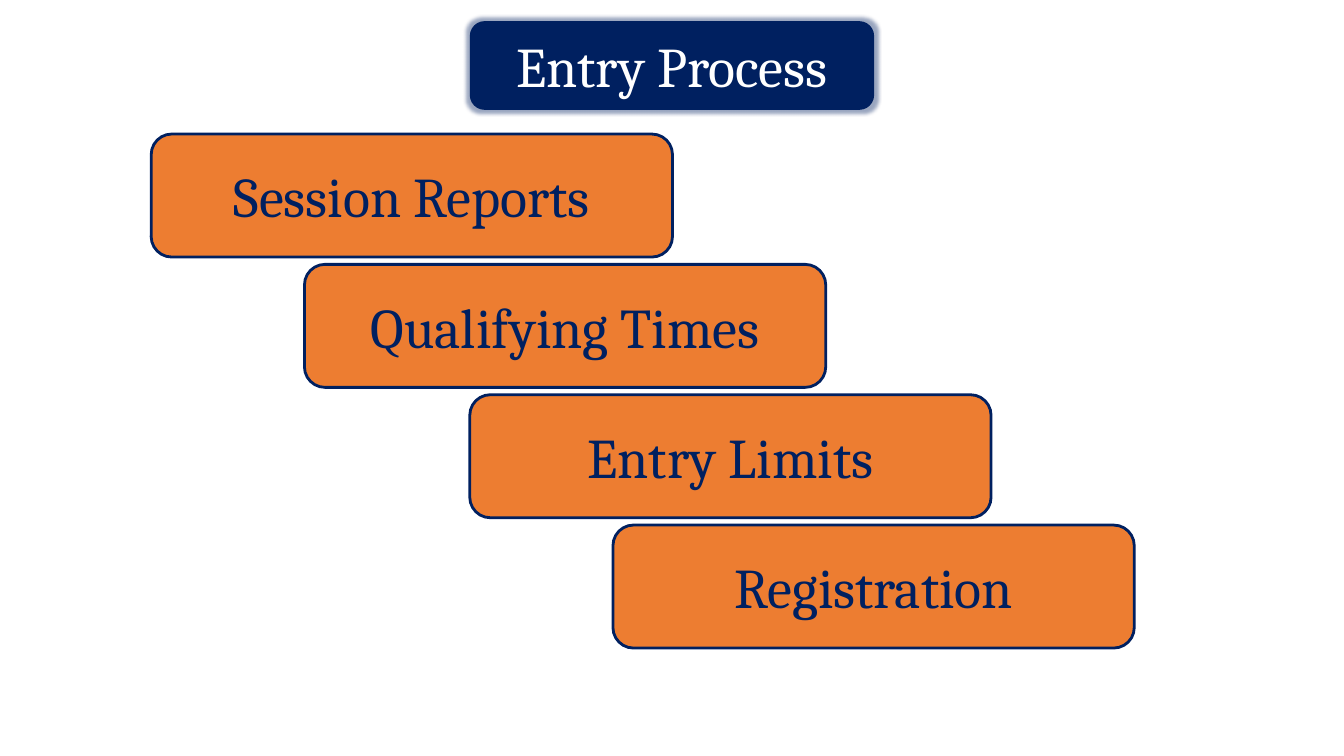
from lxml import etree
from pptx import Presentation
from pptx.dml.color import RGBColor
from pptx.enum import shapes, text
from pptx.oxml.ns import qn
from pptx.util import Inches, Pt

TITLE = "Entry Process"
TITLE_BOX = (4.66, 0.21, 4.01, 0.88)

# Each step with its left edge in inches
STEPS = [
    ("Session Reports", 1.5),
    ("Qualifying Times", 3.02),
    ("Entry Limits", 4.66),
    ("Registration", 6.08),
]
FIRST_TOP, PITCH = 1.33, 1.293
STEP_WIDTH, STEP_HEIGHT = 5.17, 1.22

THEME = {
    "navy": "002060",
    "orange": "ED7D31",
    "white": "FFFFFF",
    "font": "Cambria",
    "size": 40,
    "outline": 2,
    "glow_radius": 5,
    "glow_alpha": 40,
}


def color(name):
    return RGBColor.from_string(THEME[name])


def add_box(slide, label, box, fill, ink, outline=None):
    """Add a rounded rectangle with a centred label."""
    panel = slide.shapes.add_shape(
        shapes.MSO_SHAPE.ROUNDED_RECTANGLE, *map(Inches, box))
    panel.shadow.inherit = False
    panel.fill.solid()
    panel.fill.fore_color.rgb = color(fill)
    if outline:
        panel.line.color.rgb = color(outline)
        panel.line.width = Pt(THEME["outline"])
    else:
        panel.line.fill.background()

    frame = panel.text_frame
    frame.text = label
    frame.word_wrap = True
    frame.vertical_anchor = text.MSO_ANCHOR.MIDDLE
    paragraph = frame.paragraphs[0]
    paragraph.alignment = text.PP_ALIGN.CENTER
    font = paragraph.runs[0].font
    font.name = THEME["font"]
    font.size = Pt(THEME["size"])
    font.color.rgb = color(ink)
    return panel


def add_glow(panel, name):
    effects = panel._element.spPr.find(qn("a:effectLst"))
    glow = etree.SubElement(effects, qn("a:glow"),
                            rad=str(Pt(THEME["glow_radius"])))
    tint = etree.SubElement(glow, qn("a:srgbClr"), val=THEME[name])
    etree.SubElement(tint, qn("a:alpha"), val=str(THEME["glow_alpha"] * 1000))


def main():
    deck = Presentation()
    deck.slide_width, deck.slide_height = Inches(13.33), Inches(7.5)
    slide = deck.slides.add_slide(deck.slide_layouts[6])

    for row, (label, left) in enumerate(STEPS):
        box = (left, FIRST_TOP + row * PITCH, STEP_WIDTH, STEP_HEIGHT)
        add_box(slide, label, box, "orange", "navy", outline="navy")

    title = add_box(slide, TITLE, TITLE_BOX, "navy", "white")
    add_glow(title, "navy")

    deck.save("out.pptx")


if __name__ == "__main__":
    main()
